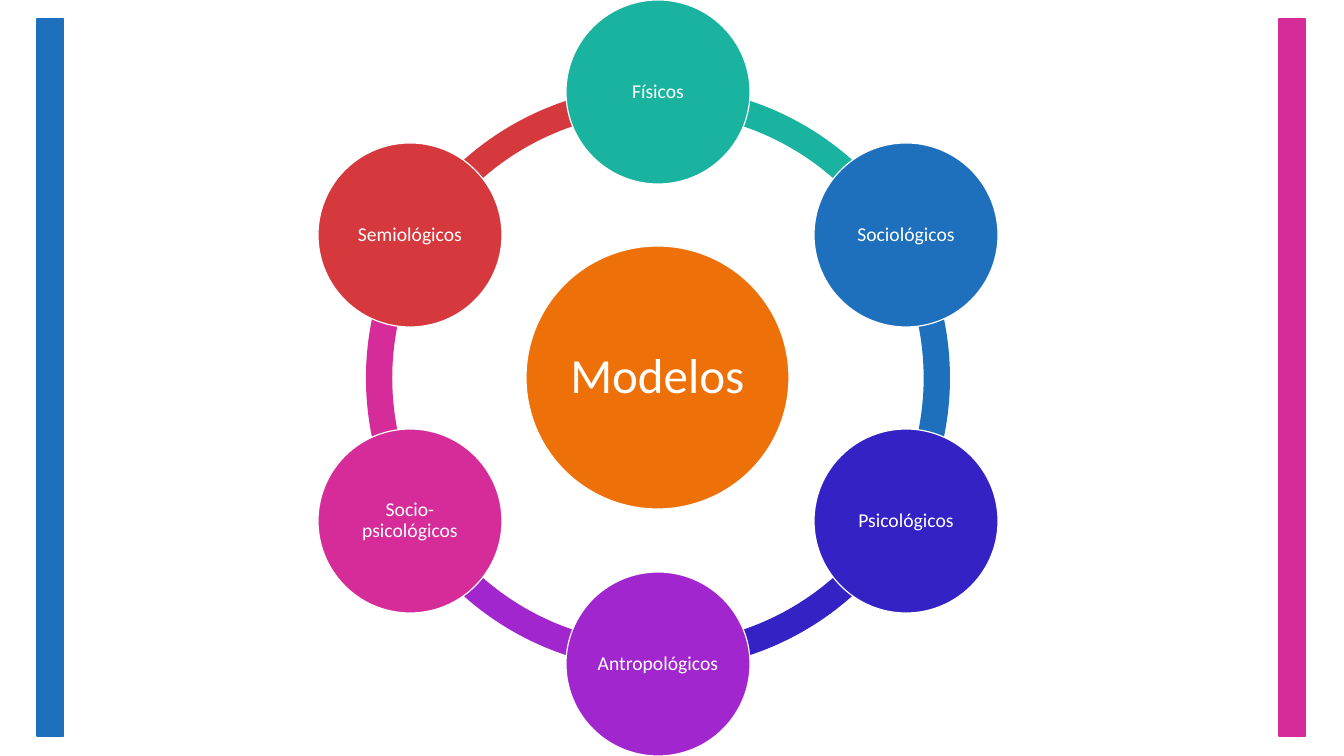
from math import cos, radians, sin

from pptx import Presentation
from pptx.dml.color import RGBColor
from pptx.enum.shapes import MSO_SHAPE
from pptx.enum.text import MSO_ANCHOR, PP_ALIGN
from pptx.util import Pt

EMU_PER_PX = 914400 / 100.8
PAGE_WIDTH, PAGE_HEIGHT = 1344, 756
CENTRE_X, CENTRE_Y = 658, 378
ORBIT, RING_SIZE, HUB_SIZE, NODE_SIZE = 286, 584, 263, 184
STEP = 60
WHITE, BLUE, PINK = "FFFFFF", "1E6FBC", "D52C99"

MODELS = [
    ("Físicos", "1AB39F"),
    ("Sociológicos", BLUE),
    ("Psicológicos", "3422C5"),
    ("Antropológicos", "A126CE"),
    ("Socio-psicológicos", PINK),
    ("Semiológicos", "D5393D"),
]


def px(length):
    return round(length * EMU_PER_PX)


def colour(value):
    return RGBColor.from_string(value)


class Page:
    """Holds the style and the slide on which elements are drawn."""

    def __init__(self, deck):
        self.font_name = "Calibri"
        self.line_width = Pt(0.85)
        self.slide = deck.slides.add_slide(deck.slide_layouts[6])

    def shape(self, kind, left, top, width, height, fill, line=None):
        shape = self.slide.shapes.add_shape(
            kind, px(left), px(top), px(width), px(height)
        )
        shape.shadow.inherit = False
        shape.fill.solid()
        shape.fill.fore_color.rgb = colour(fill)
        if line:
            shape.line.color.rgb = colour(line)
            shape.line.width = self.line_width
        else:
            shape.line.fill.background()
        return shape

    def bar(self, left, fill):
        self.shape(MSO_SHAPE.RECTANGLE, left, 19, 27, 717, fill, fill)

    def arc(self, start, fill):
        left, top = CENTRE_X - RING_SIZE // 2, CENTRE_Y - RING_SIZE // 2
        arc = self.shape(MSO_SHAPE.BLOCK_ARC, left, top, RING_SIZE, RING_SIZE, fill)
        for index, angle in enumerate((start, start + STEP)):
            arc.adjustments[index] = angle % 360 * 0.6
        arc.adjustments[2] = 0.045

    def circle(self, centre_x, centre_y, size, fill, text, font_size, inset):
        left, top = round(centre_x - size / 2), round(centre_y - size / 2)
        circle = self.shape(MSO_SHAPE.OVAL, left, top, size, size, fill, WHITE)
        frame = circle.text_frame
        frame.word_wrap = True
        frame.vertical_anchor = MSO_ANCHOR.MIDDLE
        frame.margin_left = frame.margin_right = px(inset)
        frame.margin_top = frame.margin_bottom = px(inset)
        para = frame.paragraphs[0]
        para.text = text
        para.alignment = PP_ALIGN.CENTER
        para.line_spacing = 0.9
        para.font.name = self.font_name
        para.font.size = Pt(font_size)
        para.font.color.rgb = colour(WHITE)


def main():
    deck = Presentation()
    deck.slide_width, deck.slide_height = px(PAGE_WIDTH), px(PAGE_HEIGHT)
    page = Page(deck)

    angles = [270 + STEP * index for index in range(len(MODELS))]
    nodes = list(zip(angles, MODELS))
    for angle, (name, fill) in reversed(nodes):
        page.arc(angle, fill)
    page.circle(CENTRE_X, CENTRE_Y, HUB_SIZE, "EE7008", "Modelos", 35, 5)
    for angle, (name, fill) in nodes:
        node_x = CENTRE_X + ORBIT * cos(radians(angle))
        node_y = CENTRE_Y + ORBIT * sin(radians(angle))
        page.circle(node_x, node_y, NODE_SIZE, fill, name, 14, 2)

    page.bar(37, BLUE)
    page.bar(1279, PINK)
    deck.save("out.pptx")


if __name__ == "__main__":
    main()
